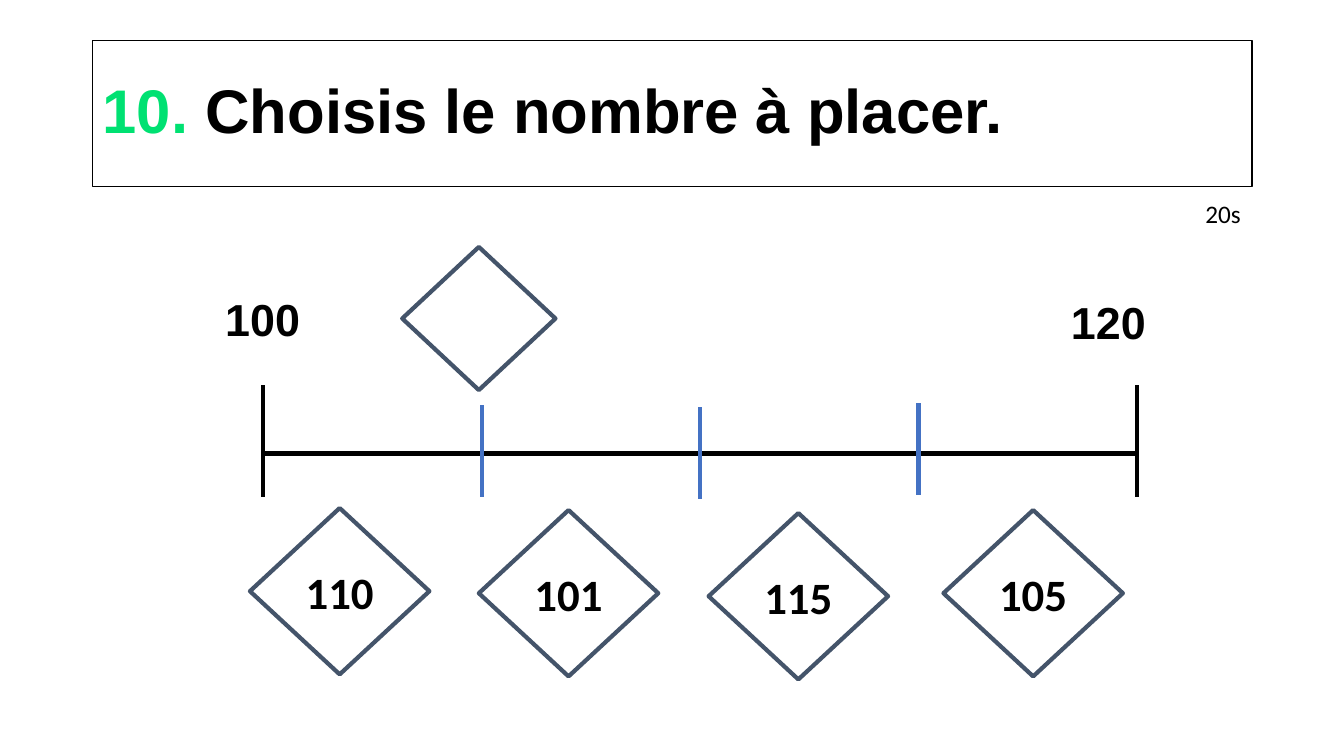
from lxml import etree
from pptx import Presentation
from pptx.dml.color import RGBColor
from pptx.enum.shapes import MSO_CONNECTOR, MSO_SHAPE
from pptx.enum.text import MSO_ANCHOR, PP_ALIGN
from pptx.oxml.ns import qn
from pptx.util import Inches, Pt

LEFT, CENTER = PP_ALIGN.LEFT, PP_ALIGN.CENTER
TOP, MIDDLE = MSO_ANCHOR.TOP, MSO_ANCHOR.MIDDLE
RECT, DIAMOND = MSO_SHAPE.RECTANGLE, MSO_SHAPE.DIAMOND
STRAIGHT = MSO_CONNECTOR.STRAIGHT

COLORS = {
    "ink": "000000",
    "paper": "FFFFFF",
    "green": "00E172",
    "blue": "4472C4",
    "slate": "44546A",
}


def color(name):
    return RGBColor.from_string(COLORS[name])


class Board:
    """Draws on one slide; every length is a percentage of the slide's size."""

    def __init__(self):
        self.deck = Presentation()
        self.deck.slide_width = Inches(13.33)
        self.deck.slide_height = Inches(7.5)
        self.shapes = self.deck.slides.add_slide(self.deck.slide_layouts[6]).shapes

    def x(self, share):
        return round(self.deck.slide_width * share / 100)

    def y(self, share):
        return round(self.deck.slide_height * share / 100)

    def box(self, left, top, width, height):
        return self.x(left), self.y(top), self.x(width), self.y(height)

    def label(self, shape, runs, size, font="Arial", bold=True,
              align=CENTER, anchor=TOP, wrap=True):
        """Fill a shape with one paragraph of (text, color name) runs."""
        frame = shape.text_frame
        frame.word_wrap = wrap
        frame.vertical_anchor = anchor
        para = frame.paragraphs[0]
        para.alignment = align
        para.font.name, para.font.size, para.font.bold = font, Pt(size), bold
        for text, tone in runs:
            run = para.add_run()
            run.text = text
            run.font.color.rgb = color(tone)
        return para

    def text(self, area, text, size, **style):
        self.label(self.shapes.add_textbox(*self.box(*area)),
                   [(text, "ink")], size, **style)

    def shape(self, kind, area, line, weight, fill=None):
        shape = self.shapes.add_shape(kind, *self.box(*area))
        shape.shadow.inherit = False
        if fill:
            shape.fill.solid()
            shape.fill.fore_color.rgb = color(fill)
        else:
            shape.fill.background()
        shape.line.color.rgb = color(line)
        shape.line.width = Pt(weight)
        return shape

    def title(self, area, runs):
        shape = self.shape(RECT, area, "ink", 1, "paper")
        para = self.label(shape, runs, 44, align=LEFT, anchor=MIDDLE)
        para.line_spacing = 0.9

    def diamond(self, area, text=""):
        shape = self.shape(DIAMOND, area, "slate", 3)
        if text:
            self.label(shape, [(text, "ink")], 32, font="Calibri", anchor=MIDDLE)

    def line(self, x1, y1, x2, y2, tone="ink"):
        line = self.shapes.add_connector(
            STRAIGHT, self.x(x1), self.y(y1), self.x(x2), self.y(y2))
        line.line.color.rgb = color(tone)
        line.line.width = Pt(3)
        etree.SubElement(line._element.spPr, qn("a:effectLst"))


def main():
    board = Board()
    board.title((6.9, 5.33, 86.25, 19.33),
                [("10.", "green"), (" Choisis le nombre à placer.", "ink")])
    board.text((88.95, 25.6, 4.2, 5.33), "20s", 18, font="Calibri",
               bold=False, align=LEFT, wrap=False)

    # Number line, cut into quarters
    start, end, level = 19.58, 84.6, 60
    board.line(start, level, end, level)
    for x in (start, end):
        board.line(x, 65.73, x, 50.93)
    step = (end - start) / 4
    for i, top in enumerate((53.6, 53.87, 53.33), 1):
        x = start + i * step
        board.line(x, top, x, top + 12.13, "blue")
    board.text((14.63, 37.87, 9.83, 8.53), "100", 32)
    board.text((77.7, 38.27, 9.53, 8.53), "120", 32)

    # Empty place, then the choices
    board.diamond((29.93, 32.67, 11.4, 18.93))
    for left, top, text in ((18.6, 67.2, "110"), (35.63, 67.47, "101"),
                            (52.73, 67.87, "115"), (70.2, 67.47, "105")):
        board.diamond((left, top, 13.35, 22), text)

    board.deck.save("out.pptx")


if __name__ == "__main__":
    main()
